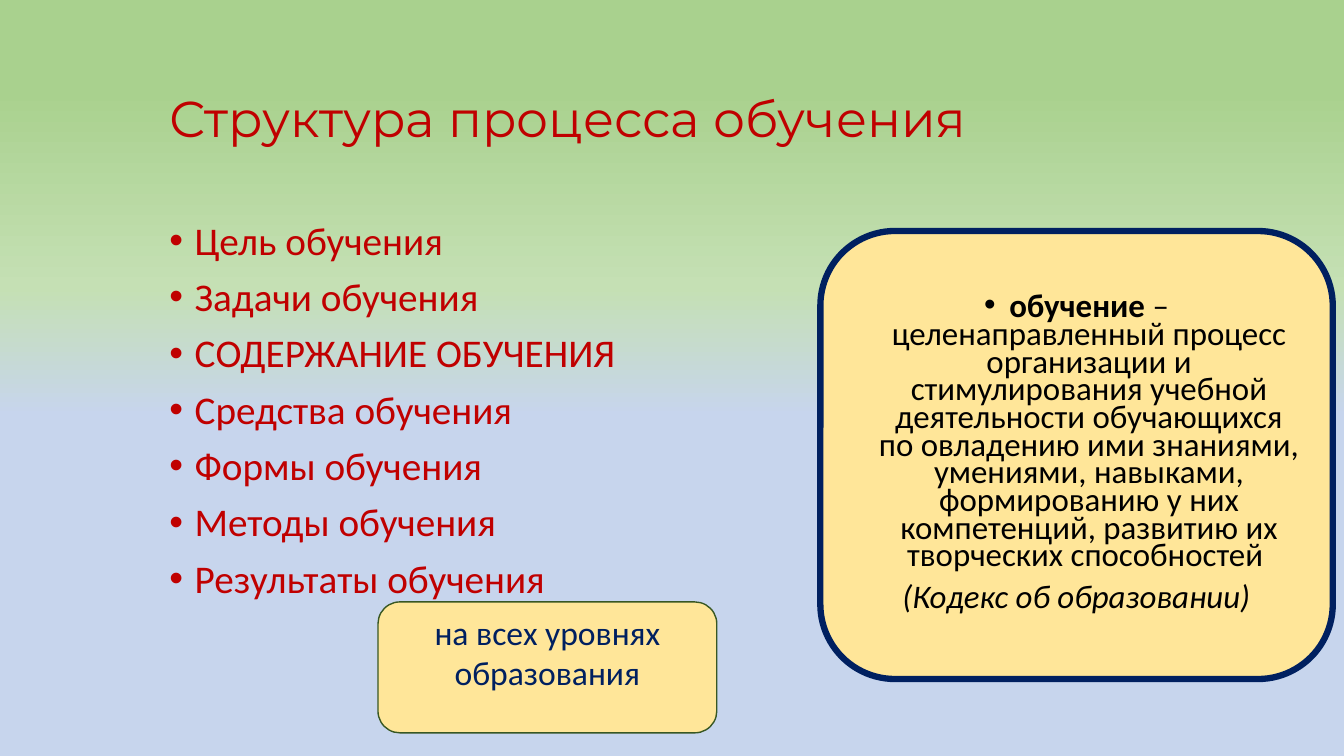
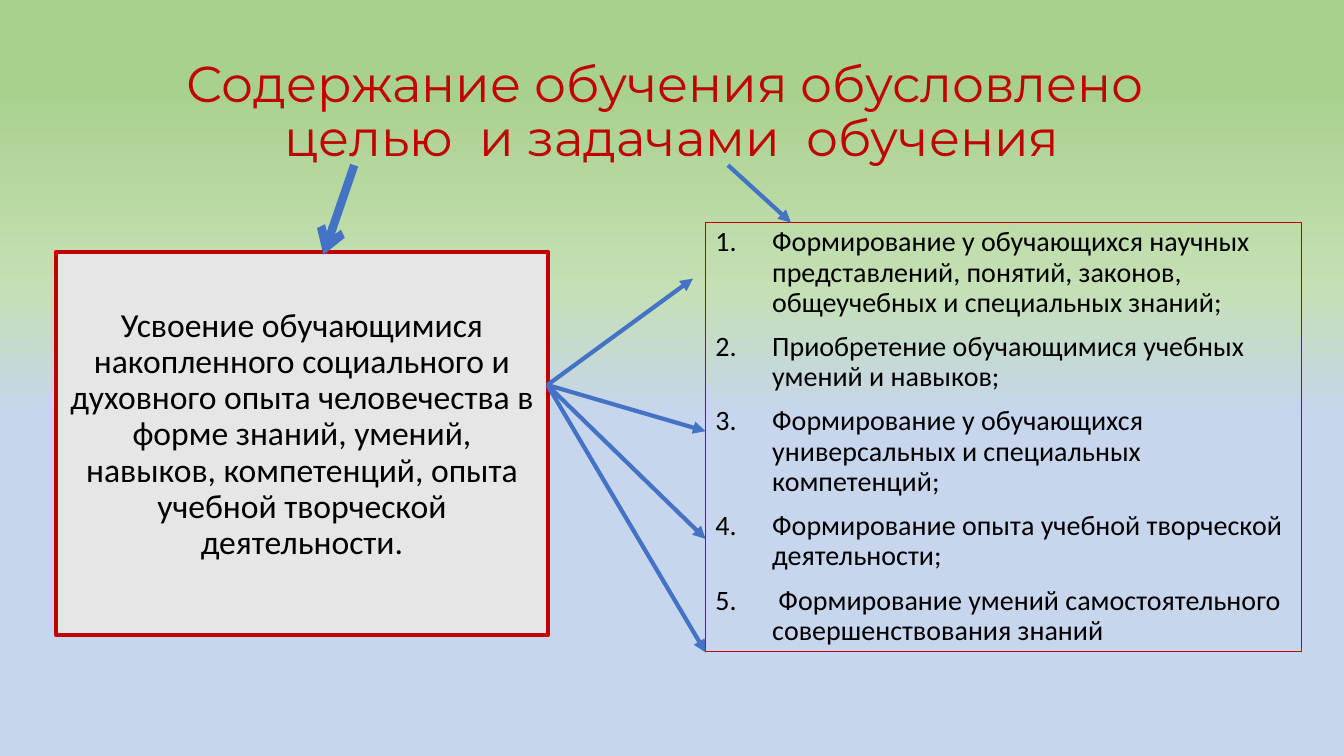
from lxml import etree
from pptx import Presentation
from pptx.dml.color import RGBColor
from pptx.enum.shapes import MSO_CONNECTOR, MSO_SHAPE
from pptx.enum.text import MSO_ANCHOR, PP_ALIGN
from pptx.oxml.ns import qn
from pptx.util import Pt

COLORS = {
    "green": "A9D18E", "pale_green": "C5E0B4", "sky": "C7D5ED",
    "red": "C00000", "navy": "002060", "black": "000000",
    "cream": "FFE699", "gray": "E7E6E6", "olive": "385723", "blue": "4472C4",
}
TITLE = dict(size=36, font="Montserrat", color="red", spacing=0.9)


def rgb(name):
    return RGBColor.from_string(COLORS[name])


def write(tf, text, p=None, size=24, font="Calibri", color="black", bold=False,
          italic=False, align=PP_ALIGN.LEFT, spacing=1.0, before=0,
          indent=0, bullet=None, number=None):
    if p is None:
        p = tf.paragraphs[0] if not tf.text else tf.add_paragraph()
        p.alignment, p.line_spacing, p.space_before = align, spacing, Pt(before)
        pPr = p._p.get_or_add_pPr()
        pPr.set("marL", str(Pt(indent)))
        pPr.set("indent", str(-Pt(indent)))
        if bullet:
            etree.SubElement(pPr, qn("a:buFont"), typeface="Arial")
            etree.SubElement(pPr, qn("a:buChar"), char=bullet)
        if number:
            etree.SubElement(pPr, qn("a:buAutoNum"), type=number)
    for i, line in enumerate(text.split("\n")):
        if i:
            p.add_line_break()
        r = p.add_run()
        r.text = line
        r.font.size, r.font.name = Pt(size), font
        r.font.bold, r.font.italic = bold, italic
        r.font.color.rgb = rgb(color)
    return p


def add_box(s, x, y, w, h, kind=None, fill=None, line=None, weight=1,
            anchor=MSO_ANCHOR.TOP, top=3.6, bottom=3.6):
    place = Pt(x), Pt(y), Pt(w), Pt(h)
    if kind is None:
        sp = s.shapes.add_textbox(*place)
    else:
        sp = s.shapes.add_shape(kind, *place)
        sp.shadow.inherit = False
        sp.line.color.rgb = rgb(line)
        sp.line.width = Pt(weight)
        if fill:
            sp.fill.solid()
            sp.fill.fore_color.rgb = rgb(fill)
        else:
            sp.fill.background()
    tf = sp.text_frame
    tf.word_wrap = True
    tf.vertical_anchor = anchor
    tf.margin_top, tf.margin_bottom = Pt(top), Pt(bottom)
    return tf


prs = Presentation()
prs.slide_width, prs.slide_height = Pt(960), Pt(540)
blank = prs.slide_layouts[6]

bg = prs.slide_master.background.fill
bg.gradient()
bg.gradient_angle = 270
stops = prs.slide_master._element.find(".//" + qn("a:gsLst"))
for stop in list(stops):
    stops.remove(stop)
for percent, name in [(0, "green"), (12, "green"), (38, "pale_green"), (55, "sky")]:
    stop = etree.SubElement(stops, qn("a:gs"), pos=str(percent * 1000))
    etree.SubElement(stop, qn("a:srgbClr"), val=COLORS[name])

s = prs.slides.add_slide(blank)
tf = add_box(s, 114, 63, 756, 47, anchor=MSO_ANCHOR.MIDDLE)
write(tf, "Структура процесса обучения", **TITLE)

tf = add_box(s, 114, 110, 366, 320, top=48)
for text in ["Цель обучения", "Задачи обучения", "СОДЕРЖАНИЕ ОБУЧЕНИЯ",
             "Средства обучения", "Формы обучения", "Методы обучения",
             "Результаты обучения"]:
    write(tf, text, size=28, color="red", spacing=0.9, before=10, indent=18, bullet="•")

tf = add_box(s, 586, 165, 366, 320, MSO_SHAPE.ROUNDED_RECTANGLE, "cream", "navy", 4.5,
             MSO_ANCHOR.MIDDLE)
definition = dict(size=23.5, align=PP_ALIGN.CENTER, spacing=0.7, before=10)
p = write(tf, "обучение", bold=True, indent=18, bullet="•", **definition)
write(tf, " – целенаправленный процесс организации и стимулирования учебной "
      "деятельности обучающихся по овладению ими знаниями, умениями, навыками, "
      "формированию у них компетенций, развитию их творческих способностей ",
      p=p, **definition)
write(tf, "(Кодекс об образовании)", italic=True, **definition)

tf = add_box(s, 270, 430, 242, 93.5, MSO_SHAPE.ROUNDED_RECTANGLE, "cream", "olive", 1,
             MSO_ANCHOR.MIDDLE, bottom=25.5)
write(tf, "на всех уровнях образования", color="navy", align=PP_ALIGN.CENTER)

s = prs.slides.add_slide(blank)
tf = add_box(s, 66, 29, 828, 104, anchor=MSO_ANCHOR.MIDDLE)
write(tf, "Содержание обучения обусловлено \nцелью  и задачами  обучения",
      align=PP_ALIGN.CENTER, **TITLE)

tf = add_box(s, 40, 180, 351.5, 273.5, MSO_SHAPE.RECTANGLE, "gray", "red", 3, top=40)
write(tf, "Усвоение обучающимися накопленного социального и духовного опыта "
      "человечества в форме знаний, умений, навыков, компетенций, опыта учебной "
      "творческой деятельности.", align=PP_ALIGN.CENTER, spacing=0.9, before=10)

tf = add_box(s, 504, 159, 426, 306.5, MSO_SHAPE.RECTANGLE, None, "red", 0.75)
for text in [
    "Формирование у обучающихся научных представлений, понятий, законов, "
    "общеучебных и специальных знаний;",
    "Приобретение обучающимися учебных умений и навыков;",
    "Формирование у обучающихся универсальных и специальных компетенций;",
    "Формирование опыта учебной творческой деятельности;",
    " Формирование умений самостоятельного совершенствования знаний",
]:
    write(tf, text, size=20, spacing=0.9, before=10, indent=40.5, number="arabicPeriod")

fan = (391, 275)
for start, end, weight, head in [
    ((253, 118), (231, 182), 6, "arrow"),
    ((520, 118), (565, 159), 3, "triangle"),
    (fan, (495, 199), 3, "triangle"),
    (fan, (504, 308), 3, "triangle"),
    (fan, (504, 385), 3, "triangle"),
    (fan, (504, 466), 3, "triangle"),
]:
    c = s.shapes.add_connector(MSO_CONNECTOR.STRAIGHT, *map(Pt, start + end))
    c.line.color.rgb = rgb("blue")
    c.line.width = Pt(weight)
    etree.SubElement(c.line._get_or_add_ln(), qn("a:tailEnd"), type=head)
    etree.SubElement(c._element.spPr, qn("a:effectLst"))

prs.save("out.pptx")
